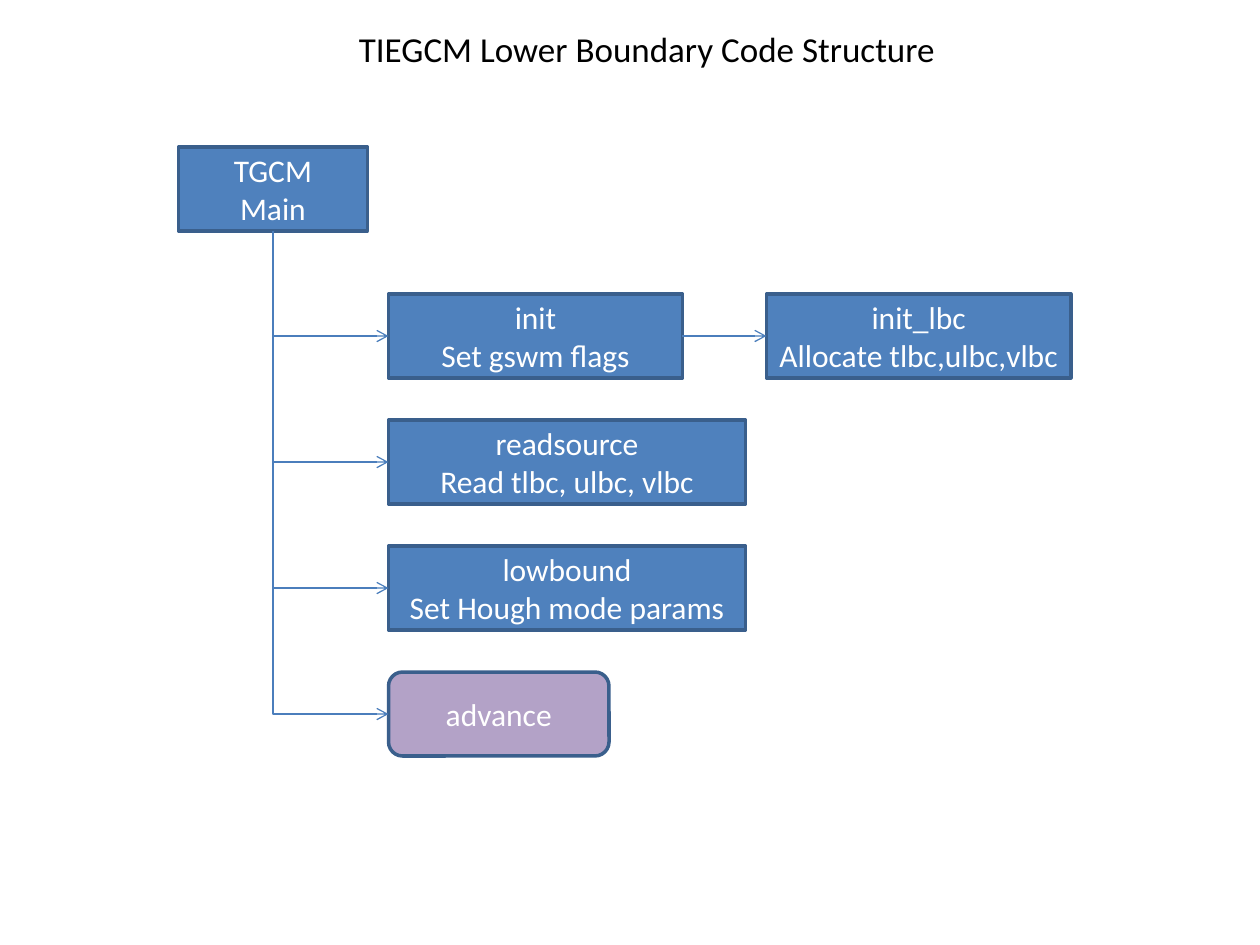
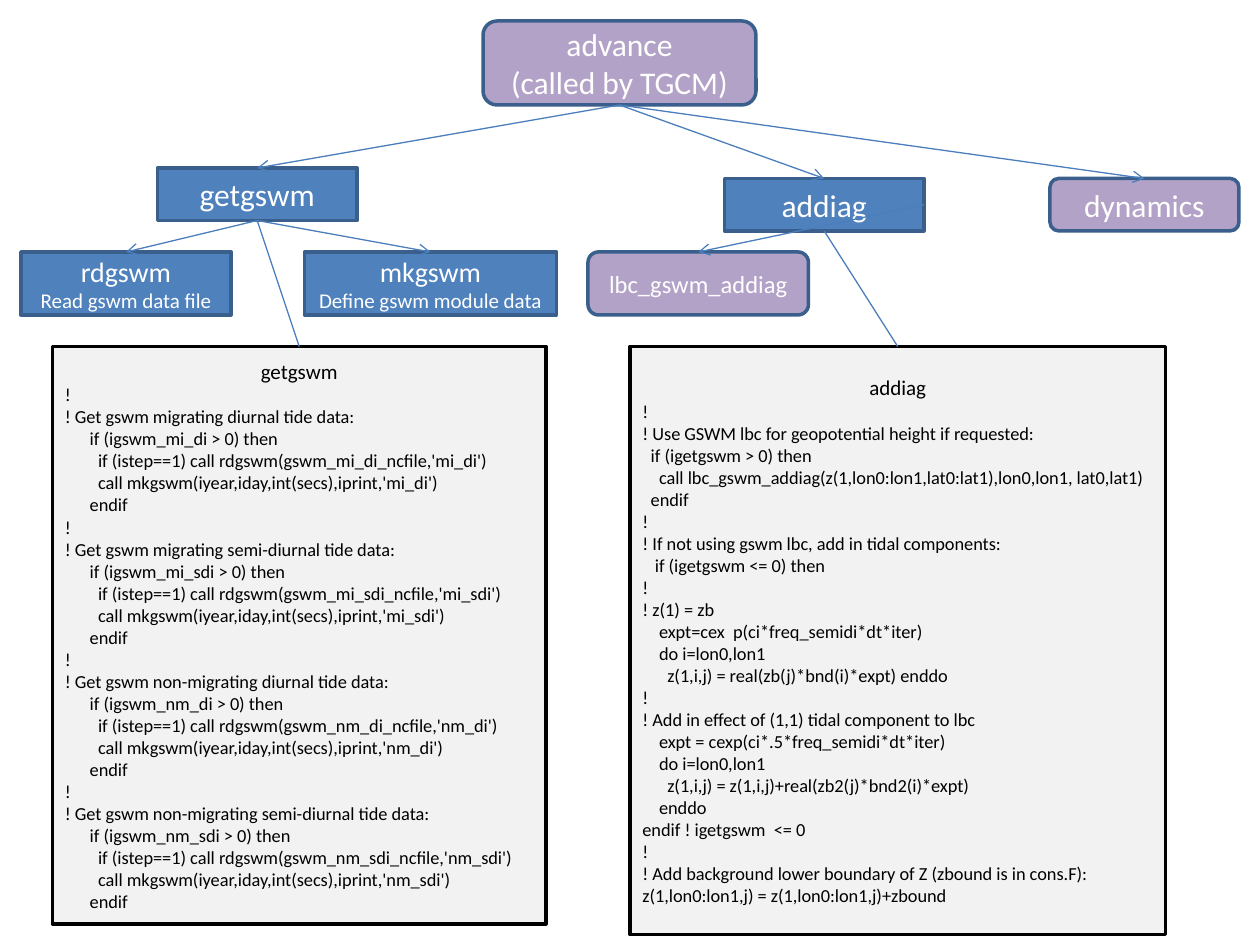
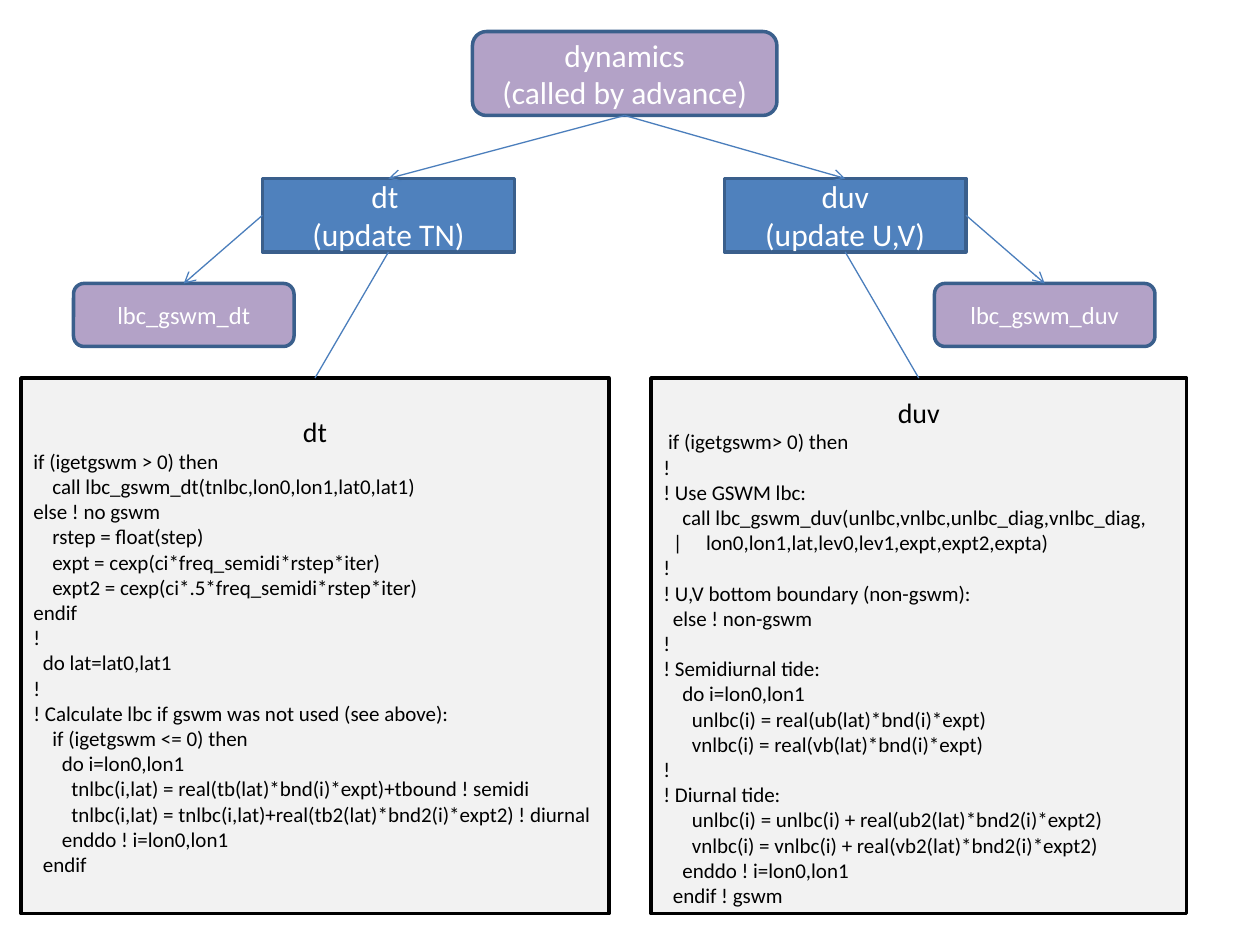
from dataclasses import dataclass

from lxml.etree import SubElement
from pptx import Presentation
from pptx.dml.color import RGBColor
from pptx.enum.shapes import MSO_CONNECTOR, MSO_SHAPE
from pptx.enum.text import PP_ALIGN
from pptx.oxml.ns import qn
from pptx.util import Inches, Pt

FONT = "Calibri"
BLUE, PURPLE, PALE = "4F81BD", "B3A2C7", "F2F2F2"
OUTLINE, ARROW, WHITE, BLACK = "3A5F8C", "4B7EBC", "FFFFFF", "000000"
COLUMNS, ROWS = 120, 90
CELL = Inches(10) // COLUMNS
SPACE_WIDTH = 0.226
TAB_SPACES = 7
TOP, LEFT, BOTTOM, RIGHT = range(4)


@dataclass
class Box:
    column: float
    row: float
    columns: float
    rows: float

    def inner(self, column, row, columns, rows):
        return Box(self.column + column, self.row + row, columns, rows)

    def lengths(self):
        cells = (self.column, self.row, self.columns, self.rows)
        return [round(cell * CELL) for cell in cells]


PAGE = Box(0, 0, COLUMNS, ROWS)

TIDES = (
    ("migrating diurnal", "mi_di"),
    ("migrating semi-diurnal", "mi_sdi"),
    ("non-migrating diurnal", "nm_di"),
    ("non-migrating semi-diurnal", "nm_sdi"),
)
TIDE_CODE = """!
! Get gswm {name} tide data:
      if (igswm_{key} > 0) then
        if (istep==1) call rdgswm(gswm_{key}_ncfile,'{key}')
        call mkgswm(iyear,iday,int(secs),iprint,'{key}')
      endif"""
GETGSWM_CODE = "\n".join(TIDE_CODE.format(name=name, key=key) for name, key in TIDES)

ADDIAG_CODE = """!
! Use GSWM lbc for geopotential height if requested:
  if (igetgswm > 0) then
    call lbc_gswm_addiag(z(1,lon0:lon1,lat0:lat1),lon0,lon1, lat0,lat1)
  endif
!
! If not using gswm lbc, add in tidal components:
   if (igetgswm <= 0) then
!
! z(1) = zb
    expt=cex  p(ci*freq_semidi*dt*iter)
    do i=lon0,lon1
      z(1,i,j) = real(zb(j)*bnd(i)*expt) enddo
!
! Add in effect of (1,1) tidal component to lbc
    expt = cexp(ci*.5*freq_semidi*dt*iter)
    do i=lon0,lon1
      z(1,i,j) = z(1,i,j)+real(zb2(j)*bnd2(i)*expt)
    enddo
endif ! igetgswm  <= 0
!
! Add background lower boundary of Z (zbound is in cons.F):
z(1,lon0:lon1,j) = z(1,lon0:lon1,j)+zbound"""

DT_CODE = """if (igetgswm > 0) then
    call lbc_gswm_dt(tnlbc,lon0,lon1,lat0,lat1)
else ! no gswm
    rstep = float(step)
    expt = cexp(ci*freq_semidi*rstep*iter)
    expt2 = cexp(ci*.5*freq_semidi*rstep*iter)
endif
!
  do lat=lat0,lat1
!
! Calculate lbc if gswm was not used (see above):
    if (igetgswm <= 0) then
      do i=lon0,lon1
        tnlbc(i,lat) = real(tb(lat)*bnd(i)*expt)+tbound ! semidi
        tnlbc(i,lat) = tnlbc(i,lat)+real(tb2(lat)*bnd2(i)*expt2) ! diurnal
      enddo ! i=lon0,lon1
  endif"""

DUV_CODE = """ if (igetgswm> 0) then
!
! Use GSWM lbc:
    call lbc_gswm_duv(unlbc,vnlbc,unlbc_diag,vnlbc_diag,
  |\tlon0,lon1,lat,lev0,lev1,expt,expt2,expta)
!
! U,V bottom boundary (non-gswm):
  else ! non-gswm
!
! Semidiurnal tide:
    do i=lon0,lon1
      unlbc(i) = real(ub(lat)*bnd(i)*expt)
      vnlbc(i) = real(vb(lat)*bnd(i)*expt)
!
! Diurnal tide:
      unlbc(i) = unlbc(i) + real(ub2(lat)*bnd2(i)*expt2)
      vnlbc(i) = vnlbc(i) + real(vb2(lat)*bnd2(i)*expt2)
    enddo ! i=lon0,lon1
  endif ! gswm"""


def color(value):
    return RGBColor.from_string(value)


def add_paragraph(frame, index, text, size, ink, align):
    paragraph = frame.add_paragraph() if index else frame.paragraphs[0]
    paragraph.text = text
    paragraph.alignment = align
    font = paragraph.font
    font.name, font.size = FONT, Pt(size)
    font.color.rgb = color(ink)
    return paragraph


def add_box(slide, box, kind, fill, outline):
    shape = slide.shapes.add_shape(kind, *box.lengths())
    shape.shadow.inherit = False
    shape.fill.solid()
    shape.fill.fore_color.rgb = color(fill)
    shape.line.color.rgb = color(outline)
    shape.line.width = Pt(2)
    return shape


def add_routine(slide, box, text, sizes=(18, 18), shared=False):
    kind = MSO_SHAPE.ROUNDED_RECTANGLE if shared else MSO_SHAPE.RECTANGLE
    shape = add_box(slide, box, kind, PURPLE if shared else BLUE, OUTLINE)
    for index, (line, size) in enumerate(zip(text.split("\n"), sizes)):
        add_paragraph(shape.text_frame, index, line, size, WHITE, PP_ALIGN.CENTER)
    return shape


def add_code(slide, box, heading, code, heading_size, code_size, top_inset=0.05):
    shape = add_box(slide, box, MSO_SHAPE.RECTANGLE, PALE, BLACK)
    frame = shape.text_frame
    frame.margin_top = Inches(top_inset)
    add_paragraph(frame, 0, heading, heading_size, BLACK, PP_ALIGN.CENTER)
    space = Pt(code_size * SPACE_WIDTH)
    for index, line in enumerate(code.split("\n"), 1):
        text = line.lstrip(" ")
        paragraph = add_paragraph(frame, index, text, code_size, BLACK, PP_ALIGN.LEFT)
        hanging = TAB_SPACES if "\t" in text else 0
        properties = paragraph._p.get_or_add_pPr()
        properties.set("marL", str((len(line) - len(text) + hanging) * space))
        properties.set("indent", str(-hanging * space))
    return shape


def join(slide, start, end, sides=(BOTTOM, TOP), kind=MSO_CONNECTOR.STRAIGHT, arrow=True):
    connector = slide.shapes.add_connector(kind, 0, 0, 0, 0)
    connector.begin_connect(start, sides[0])
    connector.end_connect(end, sides[1])
    connector.line.color.rgb = color(ARROW)
    connector.line.width = Pt(0.75)
    properties = connector._element.spPr
    if arrow:
        SubElement(connector.line._get_or_add_ln(), qn("a:tailEnd"), type="arrow")
    SubElement(properties, qn("a:effectLst"))
    return connector


def join_down_then_right(slide, start, end):
    connector = join(slide, start, end, (BOTTOM, LEFT), MSO_CONNECTOR.ELBOW)
    run, drop = connector.width, connector.height
    connector.left += (run - drop) // 2
    connector.top += (drop - run) // 2
    connector.width, connector.height = drop, run
    properties = connector._element.spPr
    transform = properties.find(qn("a:xfrm"))
    transform.set("rot", str(270 * 60000))
    transform.set("flipH", "1")
    properties.find(qn("a:prstGeom")).set("prst", "bentConnector2")


def draw_title(slide, box, text):
    frame = slide.shapes.add_textbox(*box.lengths()).text_frame
    frame.word_wrap = False
    add_paragraph(frame, 0, text, 20, BLACK, PP_ALIGN.LEFT)


def draw_main_tree(slide, area):
    main_routine = add_routine(slide, area.inner(0, 0, 18, 8), "TGCM\nMain")
    steps = (
        ("init\nSet gswm flags", 28),
        ("readsource\nRead tlbc, ulbc, vlbc", 34),
        ("lowbound\nSet Hough mode params", 34),
        ("advance", 21),
    )
    called = []
    for index, (text, columns) in enumerate(steps):
        box = area.inner(20, 14 + 12 * index, columns, 8)
        called.append(add_routine(slide, box, text, shared=text == "advance"))
        join_down_then_right(slide, main_routine, called[-1])
    allocation = add_routine(
        slide, area.inner(56, 14, 29, 8), "init_lbc\nAllocate tlbc,ulbc,vlbc")
    join(slide, called[0], allocation, (RIGHT, LEFT))


def draw_getgswm_branch(slide, area):
    getgswm = add_routine(slide, area.inner(13, 0, 19, 5), "getgswm")
    code = add_code(slide, area.inner(3, 17, 47, 55), "getgswm", GETGSWM_CODE, 12, 10.5)
    helpers = (
        (0, 20, "rdgswm\nRead gswm data file"),
        (27, 24, "mkgswm\nDefine gswm module data"),
    )
    for column, columns, text in helpers:
        helper = add_routine(slide, area.inner(column, 8, columns, 6), text, (16, 12))
        join(slide, getgswm, helper)
    join(slide, getgswm, code, arrow=False)
    return getgswm


def draw_addiag_branch(slide, area):
    addiag = add_routine(slide, area.inner(13, 0, 19, 5), "addiag")
    code = add_code(slide, area.inner(4, 16, 51, 56), "addiag", ADDIAG_CODE, 12, 10.5)
    helper = add_routine(slide, area.inner(0, 7, 21, 6), "lbc_gswm_addiag", (14,), True)
    join(slide, addiag, code, arrow=False)
    join(slide, addiag, helper, (RIGHT, TOP))
    return addiag


def draw_advance(slide, area):
    advance = add_routine(
        slide, area.inner(46, 2, 26, 8), "advance\n(called by TGCM)", shared=True)
    branches = (
        draw_getgswm_branch(slide, area.inner(2, 16, 51, 72)),
        draw_addiag_branch(slide, area.inner(56, 17, 55, 72)),
        add_routine(slide, area.inner(100, 17, 18, 5), "dynamics", shared=True),
    )
    for branch in branches:
        join(slide, advance, branch)


def draw_dt_branch(slide, area):
    update = add_routine(slide, area.inner(23, 0, 24, 7), "dt \n(update TN)")
    code = add_code(slide, area.inner(0, 19, 56, 51), "dt", DT_CODE, 16, 12)
    helper = add_routine(slide, area.inner(5, 10, 21, 6), "lbc_gswm_dt", (14,), True)
    join(slide, update, code, arrow=False)
    join(slide, update, helper, (LEFT, TOP))
    return update


def draw_duv_branch(slide, area):
    update = add_routine(slide, area.inner(7, 0, 23, 7), "duv\n(update U,V)")
    code = add_code(slide, area.inner(0, 19, 51, 51), "duv", DUV_CODE, 16, 12, 0.14)
    helper = add_routine(slide, area.inner(27, 10, 21, 6), "lbc_gswm_duv", (14,), True)
    join(slide, update, code, arrow=False)
    join(slide, update, helper, (RIGHT, TOP))
    return update


def draw_dynamics(slide, area):
    dynamics = add_routine(
        slide, area.inner(45, 3, 29, 8), "dynamics\n(called by advance)", shared=True)
    join(slide, dynamics, draw_dt_branch(slide, area.inner(2, 17, 56, 70)))
    join(slide, dynamics, draw_duv_branch(slide, area.inner(62, 17, 51, 70)))


def draw_overview(slide, area):
    draw_title(slide, area.inner(33, 2, 57.75, 5.25), "TIEGCM Lower Boundary Code Structure")
    draw_main_tree(slide, area.inner(17, 14, 85, 58))


def main():
    presentation = Presentation()
    presentation.slide_width = CELL * COLUMNS
    presentation.slide_height = CELL * ROWS
    for draw in (draw_overview, draw_advance, draw_dynamics):
        draw(presentation.slides.add_slide(presentation.slide_layouts[6]), PAGE)
    presentation.save("out.pptx")


if __name__ == "__main__":
    main()
